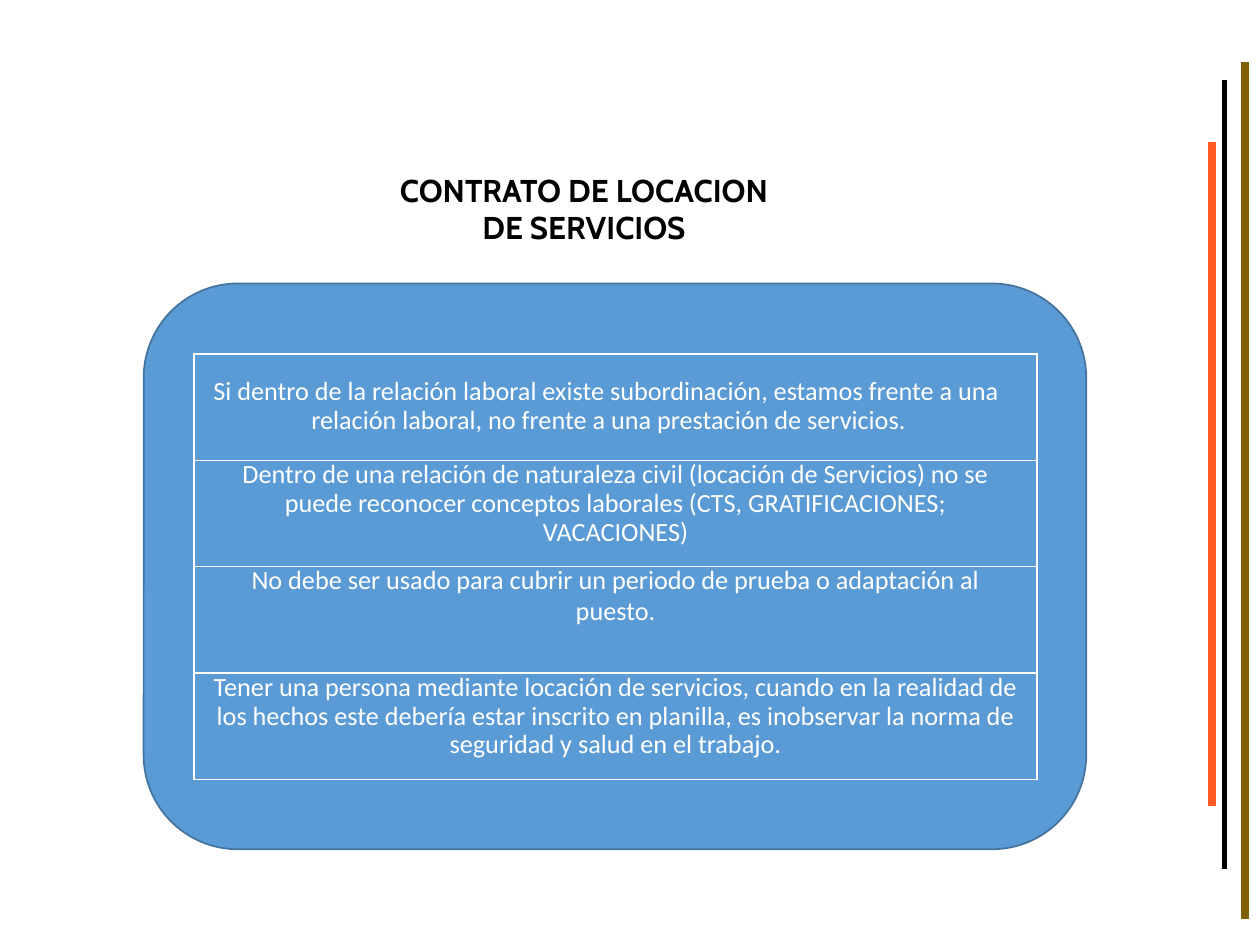
from lxml.etree import SubElement
from pptx import Presentation
from pptx.dml.color import RGBColor
from pptx.enum.shapes import MSO_CONNECTOR, MSO_SHAPE
from pptx.enum.text import MSO_ANCHOR, PP_ALIGN
from pptx.oxml.ns import qn
from pptx.util import Pt

COLORS = {
    "black": "000000",
    "white": "FFFFFF",
    "panel": "5B9BD5",
    "panel_line": "43739E",
    "brown": "806000",
    "orange": "FF5925",
}

TITLE = "CONTRATO DE LOCACION DE SERVICIOS"

# text, alignment, (left, top, right) margins, line spacing, (left, first-line) indents
ROWS = [
    ("Si dentro de la relación laboral existe subordinación, estamos frente a una "
     "relación laboral, no frente a una prestación de servicios.",
     PP_ALIGN.LEFT, (0, 13.5, 0), 0.9, (67, -56)),
    ("Dentro de una relación de naturaleza civil (locación de Servicios) no se puede "
     "reconocer conceptos laborales (CTS, GRATIFICACIONES; VACACIONES)",
     PP_ALIGN.CENTER, (21.6, 0, 21.6), 0.9, (0, 0)),
    ("No debe ser usado para cubrir un periodo de prueba o adaptación al puesto.",
     PP_ALIGN.CENTER, (21.6, 0, 21.6), Pt(17.4), (0, 0)),
    ("Tener una persona mediante locación de servicios, cuando en la realidad de los "
     "hechos este debería estar inscrito en planilla, es inobservar la norma de "
     "seguridad y salud en el trabajo.",
     PP_ALIGN.CENTER, (5, 0, 5), 0.9, (0, 0)),
]

# x, top, bottom, colour, width
SIDE_LINES = [
    (711.4, 35.3, 524.9, "brown", 4.5),
    (699.8, 46, 496.8, "black", 3),
    (692.6, 81.4, 460.8, "orange", 4.5),
]

TITLE_BOX = (127.4, 93.6, 412.6, 51.1)
PANEL_BOX = (82.1, 162, 538.6, 323.3)
TABLE_BOX = (110.9, 202.3, 481.7, 243)


def color(name):
    return RGBColor.from_string(COLORS[name])


def points(values):
    return [Pt(value) for value in values]


def format_font(font, name, size, color_name, bold=False):
    font.name, font.size, font.bold = name, Pt(size), bold
    font.color.rgb = color(color_name)


def add_title(slide):
    title = slide.shapes.title
    title.left, title.top, title.width, title.height = points(TITLE_BOX)
    frame = title.text_frame
    frame.text = TITLE
    frame.word_wrap = True
    frame.vertical_anchor = MSO_ANCHOR.MIDDLE
    frame.margin_left = frame.margin_right = Pt(90)
    frame.margin_top = frame.margin_bottom = 0
    paragraph = frame.paragraphs[0]
    paragraph.alignment = PP_ALIGN.CENTER
    paragraph.line_spacing = 1.0
    format_font(paragraph.font, "Cabin", 18, "black", bold=True)


def add_panel(slide):
    panel = slide.shapes.add_shape(MSO_SHAPE.ROUNDED_RECTANGLE, *points(PANEL_BOX))
    panel.shadow.inherit = False
    panel.fill.solid()
    panel.fill.fore_color.rgb = color("panel")
    panel.line.color.rgb = color("panel_line")
    panel.line.width = Pt(1)


def add_borders(cell):
    properties = cell._tc.get_or_add_tcPr()
    for side in ("lnL", "lnR", "lnT", "lnB"):
        line = SubElement(properties, qn(f"a:{side}"), w=str(Pt(1)))
        fill = SubElement(line, qn("a:solidFill"))
        SubElement(fill, qn("a:srgbClr"), val=COLORS["white"])


def fill_cell(cell, text, alignment, margins, spacing, indents):
    add_borders(cell)
    cell.fill.solid()
    cell.fill.fore_color.rgb = color("panel")
    cell.margin_left, cell.margin_top, cell.margin_right = points(margins)
    cell.margin_bottom = 0
    cell.vertical_anchor = MSO_ANCHOR.TOP
    cell.text = text
    paragraph = cell.text_frame.paragraphs[0]
    paragraph.alignment = alignment
    paragraph.line_spacing = spacing
    format_font(paragraph.font, "Calibri", 15, "white")
    properties = paragraph._p.get_or_add_pPr()
    for name, value in zip(("marL", "indent"), indents):
        properties.set(name, str(Pt(value)))


def add_rules_table(slide):
    table = slide.shapes.add_table(len(ROWS), 1, *points(TABLE_BOX)).table
    table.first_row = table.horz_banding = False
    for index, row in enumerate(ROWS):
        table.rows[index].height = Pt(TABLE_BOX[3] / len(ROWS))
        fill_cell(table.cell(index, 0), *row)


def add_side_line(slide, x, top, bottom, color_name, width):
    line = slide.shapes.add_connector(MSO_CONNECTOR.STRAIGHT, *points((x, top, x, bottom)))
    line.line.color.rgb = color(color_name)
    line.line.width = Pt(width)
    SubElement(line._element.spPr, qn("a:effectLst"))


def main():
    presentation = Presentation()
    presentation.slide_width, presentation.slide_height = Pt(720), Pt(540)
    slide = presentation.slides.add_slide(presentation.slide_layouts[5])
    add_title(slide)
    add_panel(slide)
    add_rules_table(slide)
    for side_line in SIDE_LINES:
        add_side_line(slide, *side_line)
    presentation.save("out.pptx")


if __name__ == "__main__":
    main()
